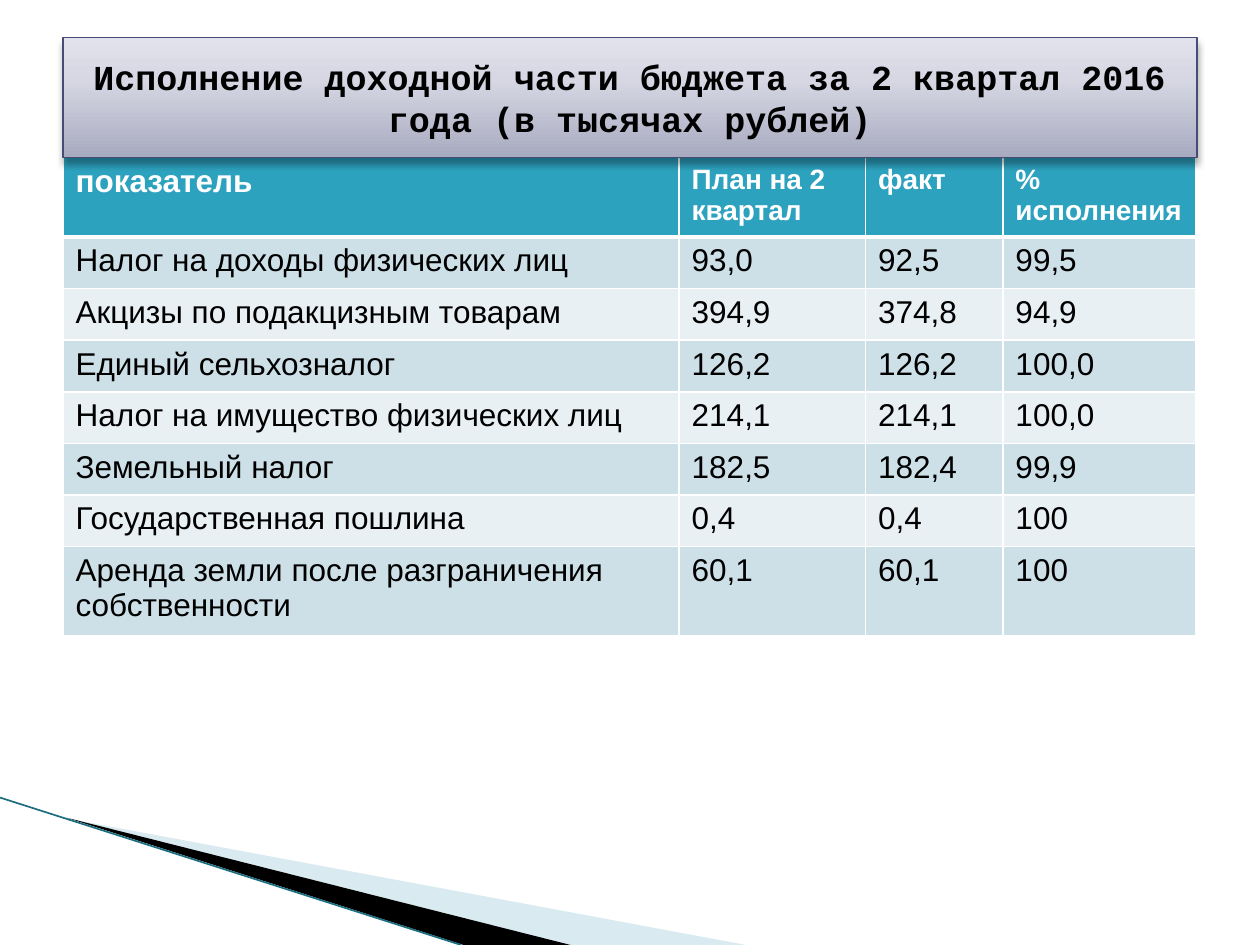
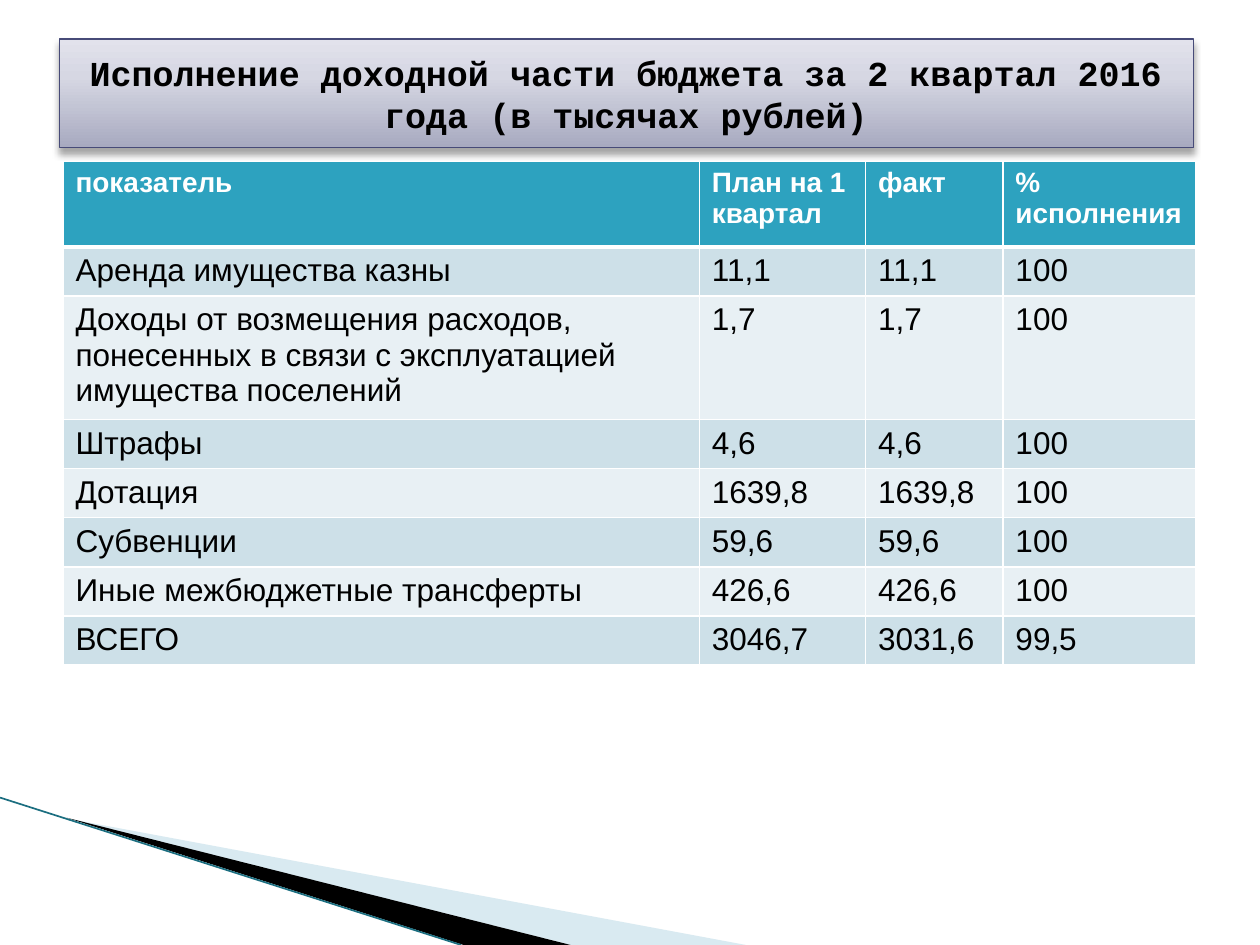
from copy import deepcopy
from dataclasses import dataclass

from lxml.etree import SubElement
from pptx import Presentation
from pptx.dml.color import RGBColor
from pptx.enum.shapes import MSO_CONNECTOR
from pptx.enum.text import MSO_ANCHOR, MSO_AUTO_SIZE, PP_ALIGN
from pptx.oxml.ns import qn
from pptx.util import Inches, Pt


@dataclass(frozen=True)
class Theme:
    title_font: str = "Courier New"
    table_font: str = "Arial"
    title_size: int = 20
    body_size: int = 18
    header_size: int = 16
    text: str = "000000"
    white: str = "FFFFFF"
    header: str = "2DA2BF"
    bands: tuple = ("CDE0E8", "E8F0F4")
    title_stops: tuple = ((0, "A8AAC0"), (0.65, "D6D7E3"), (1, "E2E2EC"))
    title_line: str = "474B78"
    pale_wedge: str = "A0CBDC"
    dark_wedge: str = "000000"
    corner_line: str = "1B6E80"


THEME = Theme()
TITLE = "Исполнение доходной части бюджета за 2 квартал 2016 года (в тысячах рублей)"

TAX_ROWS = [
    ("показатель", "План на 2 квартал", "факт", "% исполнения"),
    ("Налог на доходы физических лиц", "93,0", "92,5", "99,5"),
    ("Акцизы по подакцизным товарам", "394,9", "374,8", "94,9"),
    ("Единый сельхозналог", "126,2", "126,2", "100,0"),
    ("Налог на имущество физических лиц", "214,1", "214,1", "100,0"),
    ("Земельный налог", "182,5", "182,4", "99,9"),
    ("Государственная пошлина", "0,4", "0,4", "100"),
    ("Аренда земли после разграничения собственности", "60,1", "60,1", "100"),
]
OTHER_ROWS = [
    ("показатель", "План на 1 квартал", "факт", "% исполнения"),
    ("Аренда имущества казны", "11,1", "11,1", "100"),
    ("Доходы от возмещения расходов, понесенных в связи с эксплуатацией "
     "имущества поселений", "1,7", "1,7", "100"),
    ("Штрафы", "4,6", "4,6", "100"),
    ("Дотация", "1639,8", "1639,8", "100"),
    ("Субвенции", "59,6", "59,6", "100"),
    ("Иные межбюджетные трансферты", "426,6", "426,6", "100"),
    ("ВСЕГО", "3046,7", "3031,6", "99,5"),
]


def rgb(code):
    return RGBColor.from_string(code)


def set_font(para, name, size, color, bold):
    para.font.name = name
    para.font.size = Pt(size)
    para.font.bold = bold
    para.font.color.rgb = rgb(color)


def add_color(parent, color, alpha=None):
    node = SubElement(parent, qn("a:srgbClr"), val=color)
    if alpha is not None:
        SubElement(node, qn("a:alpha"), val=str(alpha * 1000))


# Corner decoration
def add_wedge(page, points, color, alpha=None):
    start, *others = [(Inches(x), Inches(y)) for x, y in points]
    builder = page.shapes.build_freeform(*start)
    builder.add_line_segments(others)
    wedge = builder.convert_to_shape()
    wedge.shadow.inherit = False
    wedge.line.fill.background()
    wedge.fill.solid()
    wedge.fill.fore_color.rgb = rgb(color)
    if alpha is not None:
        node = wedge.fill._xPr.find(qn("a:solidFill"))[0]
        SubElement(node, qn("a:alpha"), val=str(alpha * 1000))


def add_corner(page):
    add_wedge(page, [(0.55, 6.5), (5.92, 7.5), (4.53, 7.5)], THEME.pale_wedge, 40)
    add_wedge(page, [(0.53, 6.49), (4.53, 7.5), (3.68, 7.5)], THEME.dark_wedge)
    line = page.shapes.add_connector(
        MSO_CONNECTOR.STRAIGHT, 0, Inches(6.33), Inches(3.66), Inches(7.5))
    line.line.color.rgb = rgb(THEME.corner_line)
    line.line.width = Pt(0.95)
    SubElement(line._element.spPr, qn("a:effectLst"))


# Title band
def fill_gradient(shape):
    shape.fill.gradient()
    shape.fill.gradient_angle = 90
    stop_list = shape._element.spPr.find(qn("a:gradFill")).find(qn("a:gsLst"))
    stop_list.append(deepcopy(stop_list[-1]))
    for stop, (position, color) in zip(shape.fill.gradient_stops, THEME.title_stops):
        stop.position = position
        stop.color.rgb = rgb(color)


def add_shadow(shape):
    effects = SubElement(shape._element.spPr, qn("a:effectLst"))
    shadow = SubElement(effects, qn("a:outerShdw"), blurRad=str(Pt(4)),
                        dist=str(Pt(3)), dir="5400000", rotWithShape="0")
    add_color(shadow, THEME.text, 35)


def set_title(page, left, top, height):
    title = page.shapes.title
    title.left, title.top = Inches(left), Inches(top)
    title.width, title.height = Inches(9), Inches(height)
    fill_gradient(title)
    title.line.color.rgb = rgb(THEME.title_line)
    title.line.width = Pt(0.75)
    add_shadow(title)
    frame = title.text_frame
    frame.text = TITLE
    frame.word_wrap = True
    frame.auto_size = MSO_AUTO_SIZE.NONE
    frame.vertical_anchor = MSO_ANCHOR.MIDDLE
    para = frame.paragraphs[0]
    para.alignment = PP_ALIGN.CENTER
    set_font(para, THEME.title_font, THEME.title_size, THEME.text, True)
    # The band and its shadow lie over the table
    page.shapes._spTree.append(title._element)


# Budget table
def set_borders(cell, top, bottom):
    properties = cell._tc.get_or_add_tcPr()
    for side, width in (("L", 1), ("R", 1), ("T", top), ("B", bottom)):
        border = SubElement(properties, qn(f"a:ln{side}"), w=str(Pt(width)))
        add_color(SubElement(border, qn("a:solidFill")), THEME.white)


def format_cell(cell, row, size):
    is_header = row == 0
    set_borders(cell, top=3 if row == 1 else 1, bottom=3 if is_header else 1)
    cell.fill.solid()
    cell.fill.fore_color.rgb = rgb(
        THEME.header if is_header else THEME.bands[(row - 1) % 2])
    set_font(cell.text_frame.paragraphs[0], THEME.table_font, size,
             THEME.white if is_header else THEME.text, is_header)


def add_budget_table(page, rows, top, widths, heights, first_header_size):
    table = page.shapes.add_table(
        len(rows), len(widths), Inches(0.5), Inches(top),
        Inches(sum(widths)), Inches(sum(heights))).table
    for column, width in zip(table.columns, widths):
        column.width = Inches(width)
    for row, (values, height) in enumerate(zip(rows, heights)):
        table.rows[row].height = Inches(height)
        for column, value in enumerate(values):
            size = THEME.body_size
            if row == 0:
                size = THEME.header_size if column else first_header_size
            cell = table.cell(row, column)
            cell.text = value
            format_cell(cell, row, size)


def add_page(deck):
    page = deck.slides.add_slide(deck.slide_layouts[5])
    add_corner(page)
    return page


def main():
    deck = Presentation()
    deck.slide_width, deck.slide_height = Inches(10), Inches(7.5)

    # Tax revenue
    page = add_page(deck)
    add_budget_table(page, TAX_ROWS, 1.25, [4.89, 1.48, 1.09, 1.53],
                     [0.63] + [0.41] * 6 + [0.71], THEME.body_size)
    set_title(page, 0.5, 0.3, 0.95)

    # Other revenue and the total
    page = add_page(deck)
    add_budget_table(page, OTHER_ROWS, 1.28, [5.05, 1.32, 1.09, 1.53],
                     [0.68, 0.39, 0.98] + [0.39] * 5, THEME.header_size)
    set_title(page, 0.47, 0.31, 0.86)

    deck.save("out.pptx")


if __name__ == "__main__":
    main()
